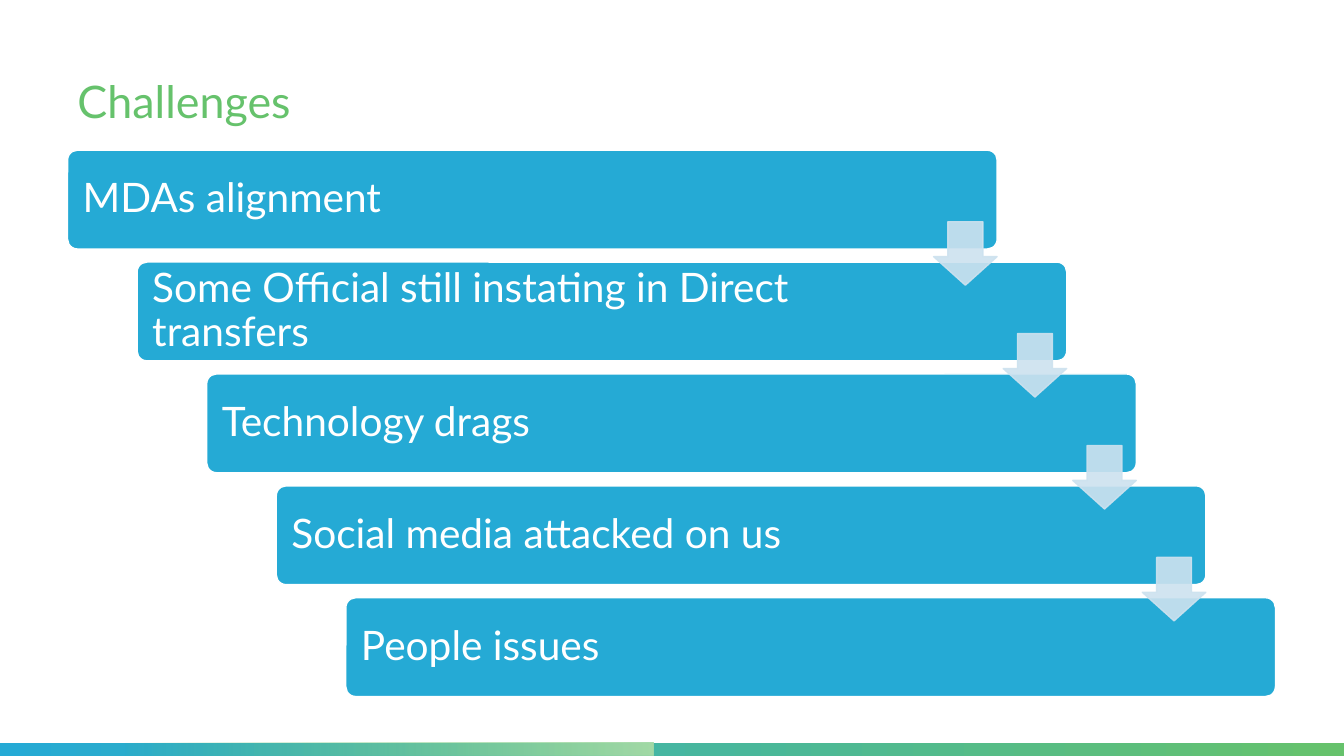
from dataclasses import dataclass

from lxml.etree import SubElement
from pptx import Presentation
from pptx.dml.color import RGBColor
from pptx.enum.shapes import MSO_SHAPE
from pptx.enum.text import MSO_ANCHOR
from pptx.oxml.ns import qn
from pptx.shapes.autoshape import Shape
from pptx.slide import Slide
from pptx.util import Inches, Pt


@dataclass(frozen=True)
class Theme:
    font: str = "Lato"
    title_size: int = 32
    step_size: int = 29
    green: str = "66C26C"
    pale_green: str = "A3DAA7"
    blue: str = "25AAD5"
    pale_blue: str = "CDE2EF"
    white: str = "FFFFFF"


@dataclass(frozen=True)
class Box:
    left: float
    top: float
    width: float
    height: float

    def lengths(self) -> list[int]:
        return [Inches(n) for n in (self.left, self.top, self.width, self.height)]


@dataclass(frozen=True)
class Strip:
    width: float
    start: str
    end: str
    start_at: float = 0
    start_alpha: int = 100


THEME = Theme()
WIDTH, HEIGHT = 13.33, 7.5
STRIP_HEIGHT = 0.13
STEP_X, STEP_Y = 0.69, 1.11
STEPS = [
    "MDAs alignment",
    "Some Official still instating in Direct transfers",
    "Technology drags",
    "Social media attacked on us",
    "People issues",
]
STRIPS = [
    Strip(WIDTH, THEME.blue, THEME.green),
    Strip(6.48, THEME.green, THEME.pale_green, start_at=0.19, start_alpha=0),
]


def add_shape(slide: Slide, kind: MSO_SHAPE, box: Box) -> Shape:
    shape = slide.shapes.add_shape(kind, *box.lengths())
    shape.shadow.inherit = False
    return shape


def paint(shape: Shape, fill: str, line: str) -> None:
    shape.fill.solid()
    shape.fill.fore_color.rgb = RGBColor.from_string(fill)
    shape.line.color.rgb = RGBColor.from_string(line)
    shape.line.width = Pt(1)


def set_alpha(shape: Shape, percent: int, count: int) -> None:
    """Set the opacity of the first count colours in the shape."""
    for color in list(shape.element.spPr.iter(qn("a:srgbClr")))[:count]:
        SubElement(color, qn("a:alpha"), val=str(percent * 1000))


def add_text(slide: Slide, text: str, box: Box, size: int, color: str,
             anchor: MSO_ANCHOR, inset: float) -> None:
    frame = slide.shapes.add_textbox(*box.lengths()).text_frame
    frame.word_wrap = True
    frame.vertical_anchor = anchor
    frame.margin_left = frame.margin_right = Inches(inset)
    frame.margin_top = frame.margin_bottom = Inches(inset)
    para = frame.paragraphs[0]
    para.line_spacing = 0.9
    run = para.add_run()
    run.text = text
    run.font.name = THEME.font
    run.font.size = Pt(size)
    run.font.color.rgb = RGBColor.from_string(color)


def add_strip(slide: Slide, strip: Strip) -> None:
    box = Box(0, HEIGHT - STRIP_HEIGHT, strip.width, STRIP_HEIGHT)
    shape = add_shape(slide, MSO_SHAPE.RECTANGLE, box)
    shape.line.fill.background()
    shape.fill.gradient()
    shape.fill.gradient_angle = 0
    first, last = shape.fill.gradient_stops
    first.position = strip.start_at
    first.color.rgb = RGBColor.from_string(strip.start)
    last.color.rgb = RGBColor.from_string(strip.end)
    if strip.start_alpha < 100:
        set_alpha(shape, strip.start_alpha, count=1)


def add_step(slide: Slide, index: int, text: str) -> None:
    left, top = 0.67 + index * STEP_X, 1.49 + index * STEP_Y
    bar = add_shape(slide, MSO_SHAPE.ROUNDED_RECTANGLE, Box(left, top, 9.22, 0.98))
    bar.adjustments[0] = 0.1
    paint(bar, THEME.blue, THEME.white)
    add_text(slide, text, Box(left + 0.03, top + 0.03, 7.84, 0.92),
             THEME.step_size, THEME.white, MSO_ANCHOR.MIDDLE, 0.12)


def add_arrow(slide: Slide, index: int) -> None:
    box = Box(9.26 + index * STEP_X, 2.2 + index * STEP_Y, 0.63, 0.63)
    arrow = add_shape(slide, MSO_SHAPE.DOWN_ARROW, box)
    arrow.adjustments[0] = 0.55
    arrow.adjustments[1] = 0.45
    paint(arrow, THEME.pale_blue, THEME.pale_blue)
    set_alpha(arrow, 90, count=2)


def main() -> None:
    deck = Presentation()
    deck.slide_width, deck.slide_height = Inches(WIDTH), Inches(HEIGHT)
    slide = deck.slides.add_slide(deck.slide_layouts[6])
    for strip in STRIPS:
        add_strip(slide, strip)
    add_text(slide, "Challenges", Box(0.67, 0.5, 11.98, 0.87),
             THEME.title_size, THEME.green, MSO_ANCHOR.BOTTOM, 0.1)
    for index, text in enumerate(STEPS):
        add_step(slide, index, text)
    for index in range(len(STEPS) - 1):
        add_arrow(slide, index)
    deck.save("out.pptx")


if __name__ == "__main__":
    main()
